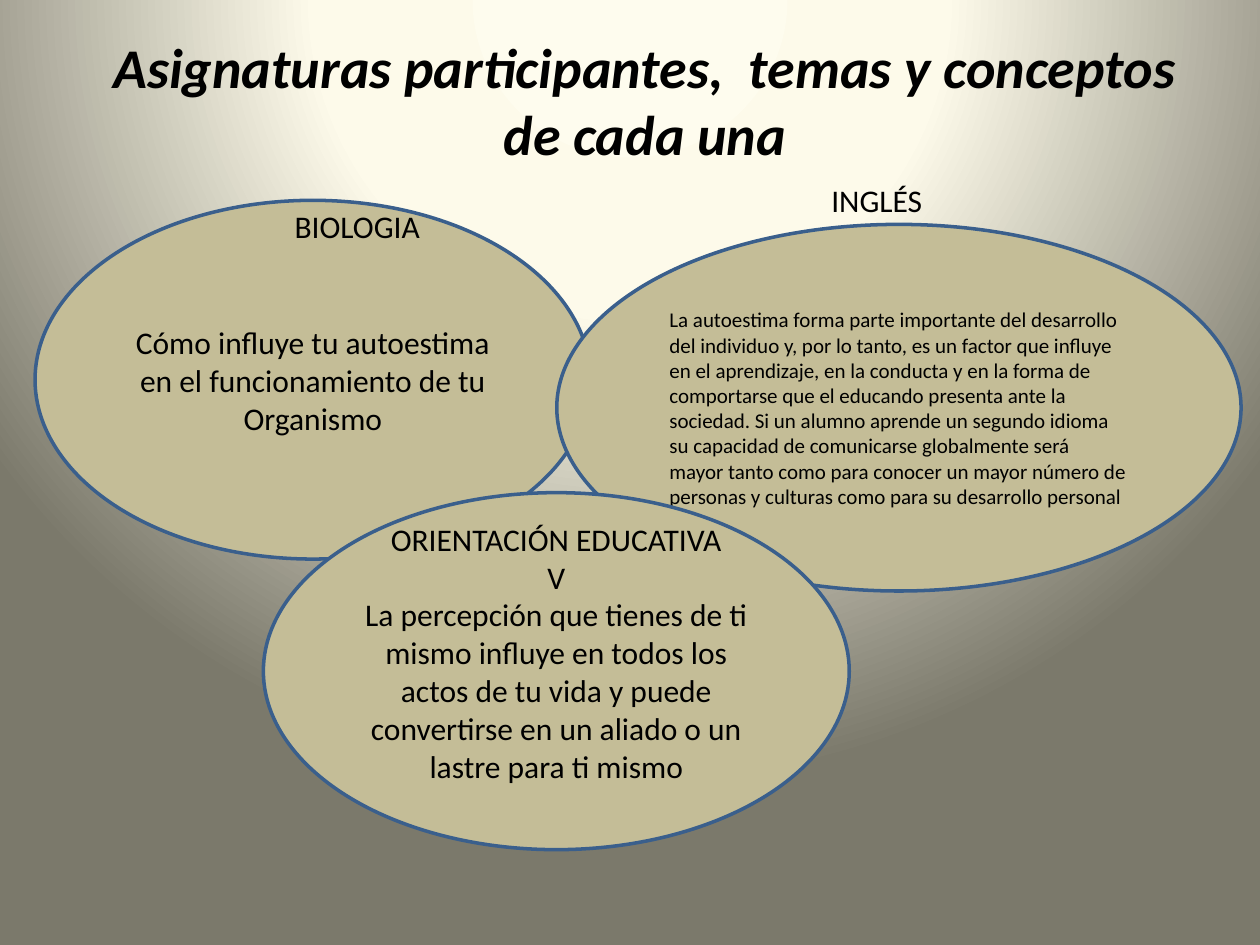
from lxml.etree import fromstring
from pptx import Presentation
from pptx.dml.color import RGBColor
from pptx.enum.shapes import MSO_SHAPE
from pptx.enum.text import MSO_ANCHOR, MSO_AUTO_SIZE, PP_ALIGN
from pptx.oxml.ns import nsdecls, qn
from pptx.util import Pt

COLORS = {
    "text": "000000",
    "oval": "C4BD97",
    "outline": "3A5F8C",
    "glow": "FEFCEE",
    "cream": "FDFAEA",
    "shade": "7B796B",
}


class SubjectSlide:
    font = "Calibri"

    def __init__(self, deck):
        self.slide = deck.slides.add_slide(deck.slide_layouts[5])

    def background(self, stops):
        fill = self.slide.background.fill
        fill.solid()
        stop_xml = "".join(
            f'<a:gs pos="{percent * 1000}"><a:srgbClr val="{COLORS[name]}"/></a:gs>'
            for percent, name in stops
        )
        gradient = fromstring(
            f'<a:gradFill {nsdecls("a")} rotWithShape="1"><a:gsLst>{stop_xml}</a:gsLst>'
            '<a:path path="circle"><a:fillToRect l="50000" t="-80000" r="50000" b="180000"/>'
            "</a:path></a:gradFill>"
        )
        solid = self.slide.element.find(".//" + qn("p:bgPr")).find(qn("a:solidFill"))
        solid.getparent().replace(solid, gradient)

    def set_text(self, frame, paragraphs, align, size, frame_format, **emphasis):
        for name, value in frame_format.items():
            setattr(frame, name, value)
        frame.text = "\n".join(paragraphs)
        font_format = {"name": self.font, "size": Pt(size), **emphasis}
        for paragraph in frame.paragraphs:
            paragraph.alignment = align
            for run in paragraph.runs:
                for name, value in font_format.items():
                    setattr(run.font, name, value)
                run.font.color.rgb = RGBColor.from_string(COLORS["text"])

    def title(self, text, box):
        heading = self.slide.shapes.title
        for name, value in zip(("left", "top", "width", "height"), box):
            setattr(heading, name, Pt(value))
        frame_format = {
            "word_wrap": True,
            "auto_size": MSO_AUTO_SIZE.NONE,
            "vertical_anchor": MSO_ANCHOR.TOP,
        }
        self.set_text(heading.text_frame, [text], PP_ALIGN.CENTER, 32,
                      frame_format, bold=True, italic=True)

    def oval(self, paragraphs, box, align=PP_ALIGN.CENTER, size=18, bottom=3.6):
        oval = self.slide.shapes.add_shape(MSO_SHAPE.OVAL, *map(Pt, box))
        oval.shadow.inherit = False
        oval.fill.solid()
        oval.fill.fore_color.rgb = RGBColor.from_string(COLORS["oval"])
        oval.line.color.rgb = RGBColor.from_string(COLORS["outline"])
        oval.line.width = Pt(2)
        frame_format = {
            "word_wrap": True,
            "vertical_anchor": MSO_ANCHOR.MIDDLE,
            "margin_bottom": Pt(bottom),
        }
        self.set_text(oval.text_frame, paragraphs, align, size, frame_format)

    def label(self, text, box):
        label = self.slide.shapes.add_textbox(*map(Pt, box))
        frame_format = {"word_wrap": False, "auto_size": MSO_AUTO_SIZE.SHAPE_TO_FIT_TEXT}
        self.set_text(label.text_frame, [text], PP_ALIGN.LEFT, 18, frame_format)


def main():
    deck = Presentation()
    deck.slide_width, deck.slide_height = Pt(720), Pt(540)
    subjects = SubjectSlide(deck)
    subjects.background([(0, "glow"), (40, "cream"), (100, "shade")])
    subjects.title("Asignaturas participantes,  temas y conceptos de cada una",
                   (48.2, 15.1, 640.8, 85))
    subjects.oval(["Cómo influye tu autoestima en el funcionamiento de tu Organismo"],
                  (20, 114.5, 317.5, 205))
    subjects.oval(
        ["La autoestima forma parte importante del desarrollo del individuo y, por lo tanto, "
         "es un factor que influye en el aprendizaje, en la conducta y en la forma de "
         "comportarse que el educando presenta ante la sociedad. Si un alumno aprende un "
         "segundo idioma su capacidad de comunicarse globalmente será mayor tanto como para "
         "conocer un mayor número de personas y culturas como para su desarrollo personal"],
        (318.2, 128.2, 391, 209.5), PP_ALIGN.LEFT, 12)
    subjects.label("INGLÉS", (468, 100.1, 67, 28.8))
    subjects.label("BIOLOGIA", (161.3, 114.5, 86.4, 28.8))
    subjects.oval(
        ["ORIENTACIÓN EDUCATIVA",
         "V",
         "La percepción que tienes de ti mismo influye en todos los actos de tu vida "
         "y puede convertirse en un aliado o un lastre para ti mismo"],
        (150.5, 281.5, 334.8, 204), bottom=25.2)
    deck.save("out.pptx")


if __name__ == "__main__":
    main()
